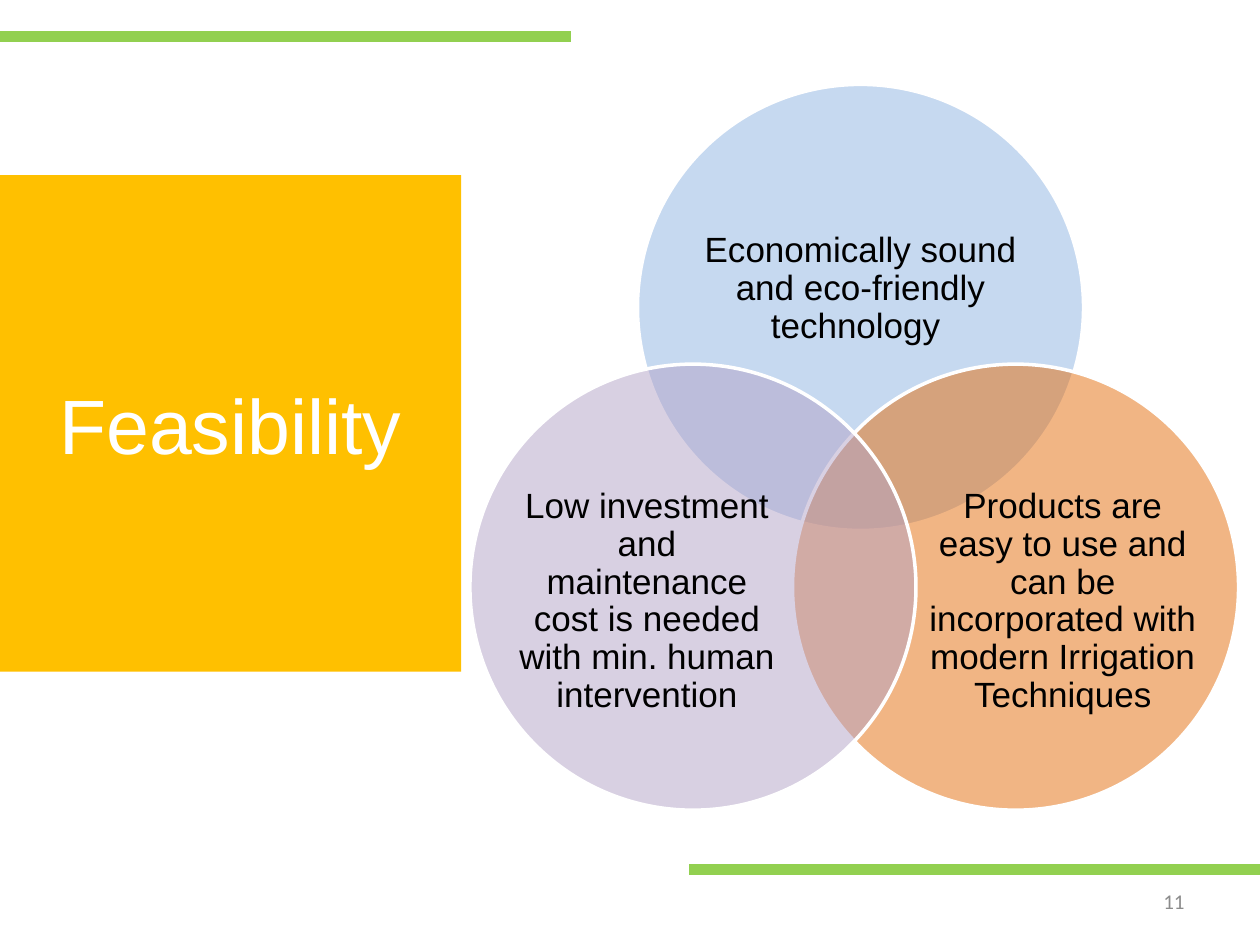
from lxml import etree
from pptx import Presentation
from pptx.dml.color import RGBColor
from pptx.enum import shapes, text
from pptx.oxml.ns import qn
from pptx.util import Inches, Pt

COLORS = {
    "blue": "8EB4E3", "orange": "E46C0A", "purple": "B3A2C7",
    "panel": "FFC000", "rule": "92D050", "white": "FFFFFF",
    "black": "000000", "number": "8C8C8C",
}
TITLE = "Feasibility"
PAGE_NUMBER = "11"
DIAMETER = 3.54
CIRCLES = [
    ("blue", (5.06, 0.67), (5.53, 1.5, 2.6, 1.59),
     "Economically sound and eco-friendly technology "),
    ("orange", (6.29, 2.89), (7.37, 3.8, 2.13, 1.95),
     "Products are easy to use and can be incorporated with modern Irrigation Techniques"),
    ("purple", (3.73, 2.89), (4.07, 3.8, 2.13, 1.95),
     "Low investment and maintenance cost is needed with min. human intervention"),
]
RULES = [(0, 4.53, 0.29), (5.47, 10, 6.9)]


def color(name):
    return RGBColor.from_string(COLORS[name])


def write(shape, words, size, ink, align=text.PP_ALIGN.CENTER, font="Arial"):
    frame = shape.text_frame
    frame.word_wrap = True
    frame.vertical_anchor = text.MSO_ANCHOR.MIDDLE
    para = frame.paragraphs[0]
    para.alignment = align
    span = para.add_run()
    span.text = words
    span.font.size = Pt(size)
    span.font.name = font
    span.font.color.rgb = color(ink)
    return frame


def add_filled(slide, kind, place, fill):
    shape = slide.shapes.add_shape(kind, *map(Inches, place))
    shape.shadow.inherit = False
    shape.fill.solid()
    shape.fill.fore_color.rgb = color(fill)
    shape.line.fill.background()
    return shape


def add_circle(slide, corner, fill):
    circle = add_filled(slide, shapes.MSO_SHAPE.OVAL, (*corner, DIAMETER, DIAMETER), fill)
    circle.line.color.rgb = color("white")
    circle.line.width = Pt(2)
    tint = circle.fill._xPr.find(qn("a:solidFill"))[0]
    etree.SubElement(tint, qn("a:alpha"), val="50000")


def add_label(slide, place, words):
    box = slide.shapes.add_textbox(*map(Inches, place))
    frame = write(box, words, 20, "black")
    frame.margin_left = frame.margin_right = frame.margin_top = frame.margin_bottom = 0
    frame.paragraphs[0].line_spacing = 0.9


def add_rule(slide, start, end, height):
    rule = slide.shapes.add_connector(
        shapes.MSO_CONNECTOR.STRAIGHT, *map(Inches, (start, height, end, height)))
    rule.line.color.rgb = color("rule")
    rule.line.width = Pt(6)
    etree.SubElement(rule._element.spPr, qn("a:effectLst"))


def main():
    deck = Presentation()
    deck.slide_width, deck.slide_height = Inches(10), Inches(7.5)
    slide = deck.slides.add_slide(deck.slide_layouts[6])

    number = slide.shapes.add_textbox(*map(Inches, (7.17, 6.95, 2.33, 0.4)))
    write(number, PAGE_NUMBER, 12, "number", text.PP_ALIGN.RIGHT, "Calibri")

    for fill, corner, place, words in CIRCLES:
        add_circle(slide, corner, fill)
        add_label(slide, place, words)

    panel = add_filled(slide, shapes.MSO_SHAPE.RECTANGLE, (0, 1.39, 3.66, 3.94), "panel")
    write(panel, TITLE, 44, "white")

    for start, end, height in RULES:
        add_rule(slide, start, end, height)

    deck.save("out.pptx")


if __name__ == "__main__":
    main()
